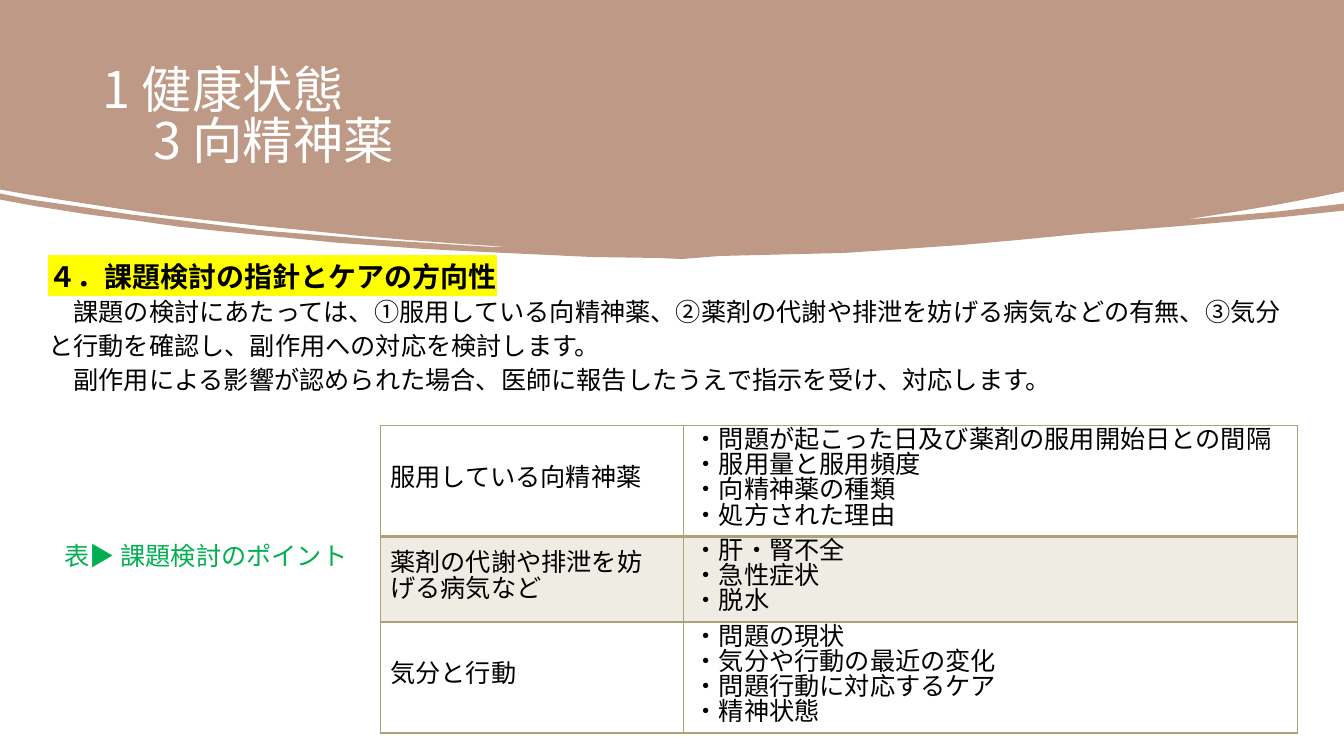
from lxml import etree
from pptx import Presentation
from pptx.dml.color import RGBColor
from pptx.enum.text import MSO_ANCHOR
from pptx.oxml.ns import qn
from pptx.util import Inches, Pt

MIDDLE, TOP = MSO_ANCHOR.MIDDLE, MSO_ANCHOR.TOP
FONT = "Noto Sans CJK JP"
BROWN, OLIVE, GREEN, YELLOW = "BE9A86", "ADA176", "00B050", "FFFF00"
BLACK, WHITE = "000000", "FFFFFF"

TITLE = ["1 健康状態", "　3 向精神薬"]
BODY = [
    "４．課題検討の指針とケアの方向性",
    "　課題の検討にあたっては、①服用している向精神薬、②薬剤の代謝や排泄を妨げる病気などの有無、③気分",
    "と行動を確認し、副作用への対応を検討します。",
    "　副作用による影響が認められた場合、医師に報告したうえで指示を受け、対応します。",
]
CAPTION = ["表▶ 課題検討のポイント"]
POINTS = [
    (["服用している向精神薬"],
     ["・問題が起こった日及び薬剤の服用開始日との間隔", "・服用量と服用頻度",
      "・向精神薬の種類", "・処方された理由"]),
    (["薬剤の代謝や排泄を妨", "げる病気など"],
     ["・肝・腎不全", "・急性症状", "・脱水"]),
    (["気分と行動"],
     ["・問題の現状", "・気分や行動の最近の変化",
      "・問題行動に対応するケア", "・精神状態"]),
]
COLUMN_WIDTHS = [3.01, 6.09]
LINE_HEIGHT, CELL_MARGINS = 0.25, 0.1

# Banner outline in inches: right edge, lower curve, then the thin gap on the left
BANNER = [
    (0, 0), (13.33, 0), (13.33, 1.9), (13.09, 1.95), (12.67, 2.03), (12.26, 2.1),
    (11.75, 2.18), (11.86, 2.17), (12.66, 2.1), (13.33, 2.02), (13.33, 2.09),
    (12.66, 2.16), (11.62, 2.25), (10.72, 2.32), (10.11, 2.38), (9.55, 2.43),
    (8.82, 2.48), (8.37, 2.51), (7.14, 2.54), (6.76, 2.57), (6.54, 2.56),
    (5.87, 2.55), (4.8, 2.5), (4.2, 2.47), (3.36, 2.41), (2.76, 2.35),
    (2.25, 2.3), (1.78, 2.25), (1.36, 2.19), (0.89, 2.13), (0.38, 2.05),
    (0, 1.98), (0, 1.92), (0.3, 1.98), (0.79, 2.05), (1.31, 2.13), (1.66, 2.17),
    (2.06, 2.22), (2.64, 2.29), (3.26, 2.34), (3.76, 2.38), (4.24, 2.41),
    (4.54, 2.43), (4.89, 2.45), (5.04, 2.45), (4.57, 2.42), (4.03, 2.38),
    (3.56, 2.34), (3.07, 2.29), (2.56, 2.24), (1.92, 2.17), (1.58, 2.13),
    (1.11, 2.06), (0.65, 1.99), (0.22, 1.92), (0, 1.88),
]


def rgb(color):
    return RGBColor.from_string(color)


def write(text_frame, lines, size, color, line_spacing=None, space_after=0):
    text_frame.text = "\n".join(lines)
    for paragraph in text_frame.paragraphs:
        paragraph.space_after = Pt(space_after)
        if line_spacing:
            paragraph.line_spacing = line_spacing
        for run in paragraph.runs:
            run.font.size = Pt(size)
            run.font.color.rgb = rgb(color)
            run.font.name = FONT
            latin = run.font._element.find(qn("a:latin"))
            east_asian = etree.Element(qn("a:ea"), typeface=FONT)
            latin.addnext(east_asian)


def add_text(slide, box, lines, size, color, anchor=TOP, **spacing):
    shape = slide.shapes.add_textbox(*map(Inches, box))
    shape.text_frame.word_wrap = True
    shape.text_frame.vertical_anchor = anchor
    write(shape.text_frame, lines, size, color, **spacing)
    return shape.text_frame


def highlight(run, color):
    mark = etree.Element(qn("a:highlight"))
    etree.SubElement(mark, qn("a:srgbClr"), val=color)
    run.font._element.find(qn("a:solidFill")).addnext(mark)


def add_borders(cell, widths):
    """Draw cell borders; widths are points for left, right, top, bottom."""
    properties = cell._tc.get_or_add_tcPr()
    for index, (side, width) in enumerate(zip("LRTB", widths)):
        line = etree.Element(qn(f"a:ln{side}"), w=str(Pt(width)))
        fill = etree.SubElement(line, qn("a:solidFill"))
        etree.SubElement(fill, qn("a:srgbClr"), val=OLIVE)
        properties.insert(index, line)


def fill_cell(cell, shaded):
    if not shaded:
        cell.fill.background()
        return
    cell.fill.solid()
    cell.fill.fore_color.rgb = rgb(OLIVE)
    color = cell._tc.tcPr.find(qn("a:solidFill")).find(qn("a:srgbClr"))
    etree.SubElement(color, qn("a:alpha"), val="20000")


def add_banner(slide):
    start, *rest = [(Inches(x), Inches(y)) for x, y in BANNER]
    builder = slide.shapes.build_freeform(*start)
    builder.add_line_segments(rest, close=True)
    banner = builder.convert_to_shape()
    banner.shadow.inherit = False
    banner.fill.solid()
    banner.fill.fore_color.rgb = rgb(BROWN)
    banner.line.fill.background()


def add_points_table(slide):
    heights = [len(details) * LINE_HEIGHT + CELL_MARGINS for _, details in POINTS]
    table = slide.shapes.add_table(
        len(POINTS), len(COLUMN_WIDTHS), Inches(3.77), Inches(4.22),
        Inches(sum(COLUMN_WIDTHS)), Inches(sum(heights))).table
    table.first_row = table.horz_banding = False
    for column, width in zip(table.columns, COLUMN_WIDTHS):
        column.width = Inches(width)
    for row_index, (row, height) in enumerate(zip(table.rows, heights)):
        row.height = Inches(height)
        top = 2 if row_index == 1 else 1
        bottom = 2 if row_index == 0 else 1
        for cell, lines, anchor in zip(row.cells, POINTS[row_index], (MIDDLE, TOP)):
            write(cell.text_frame, lines, 18, BLACK, line_spacing=Pt(18))
            cell.vertical_anchor = anchor
            fill_cell(cell, shaded=row_index % 2 == 1)
            add_borders(cell, (1, 1, top, bottom))


def main():
    presentation = Presentation()
    presentation.slide_width = Inches(13.33)
    presentation.slide_height = Inches(7.5)
    slide = presentation.slides.add_slide(presentation.slide_layouts[6])

    add_banner(slide)
    body = add_text(slide, (0.38, 2.61, 12.57, 1.39), BODY, 18, BLACK,
                    line_spacing=Pt(18), space_after=6)
    heading = body.paragraphs[0].runs[0]
    heading.font.size = Pt(20)
    heading.font.bold = True
    highlight(heading, YELLOW)

    add_text(slide, (0.54, 5.31, 6.66, 0.4), CAPTION, 18, GREEN)
    add_points_table(slide)
    add_text(slide, (0.92, 0.44, 11.5, 1.47), TITLE, 36, WHITE, MIDDLE,
             line_spacing=0.85)
    presentation.save("out.pptx")


if __name__ == "__main__":
    main()
